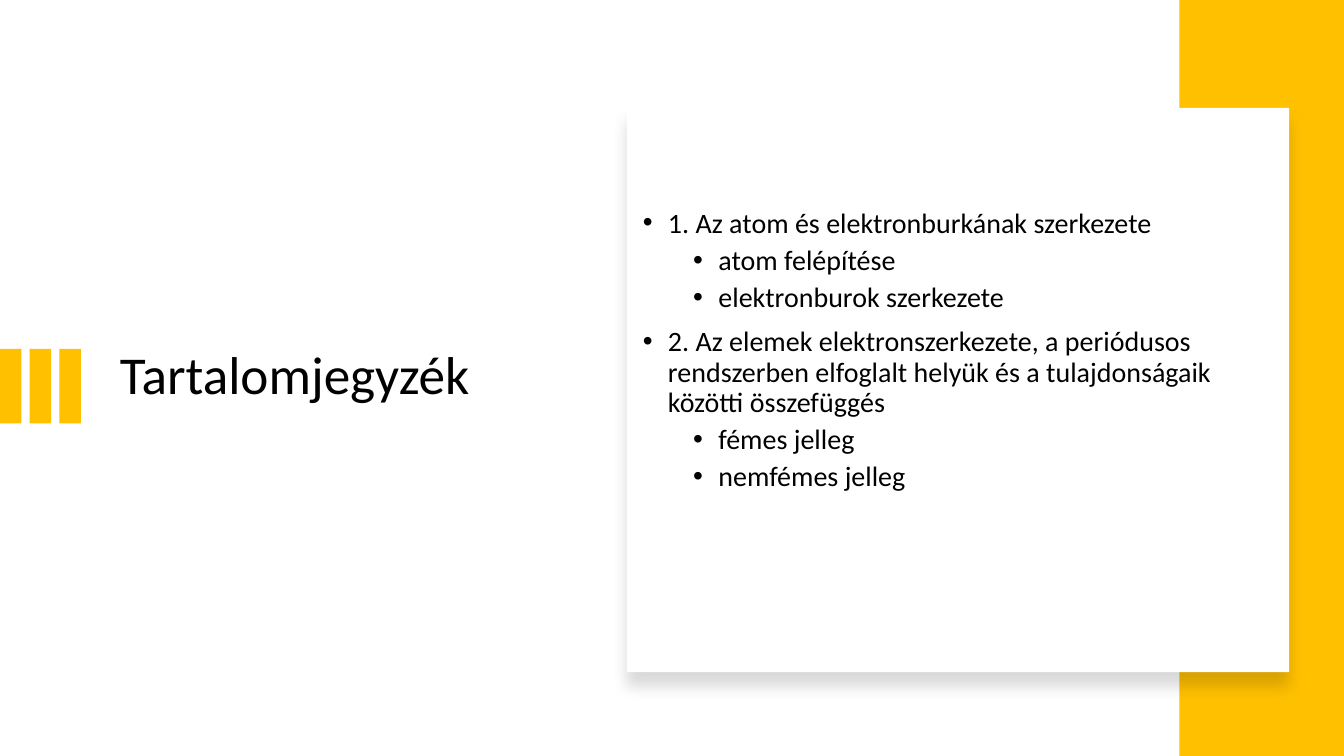
from lxml.etree import SubElement
from pptx import Presentation
from pptx.dml.color import RGBColor
from pptx.enum.shapes import MSO_SHAPE
from pptx.enum.text import MSO_ANCHOR
from pptx.oxml.ns import qn
from pptx.util import Cm, Pt

COLORS = {"accent": "FFC000", "card": "FFFFFF", "text": "000000", "shadow": "000000"}
FONT = "Calibri"
CONTENTS = [
    (0, "1. Az atom és elektronburkának szerkezete"),
    (1, "atom felépítése"),
    (1, "elektronburok szerkezete"),
    (0, "2. Az elemek elektronszerkezete, a periódusos rendszerben elfoglalt "
        "helyük és a tulajdonságaik közötti összefüggés"),
    (1, "fémes jelleg"),
    (1, "nemfémes jelleg"),
]


def add_rectangle(left, top, width, height, color):
    shape = slide.shapes.add_shape(
        MSO_SHAPE.RECTANGLE, Cm(left), Cm(top), Cm(width), Cm(height))
    shape.shadow.inherit = False
    shape.fill.solid()
    shape.fill.fore_color.rgb = RGBColor.from_string(COLORS[color])
    shape.line.fill.background()
    return shape


def format_paragraph(paragraph, size):
    paragraph.line_spacing = 0.9
    for run in paragraph.runs:
        run.font.name = FONT
        run.font.size = Pt(size)
        run.font.color.rgb = RGBColor.from_string(COLORS["text"])


presentation = Presentation()
presentation.slide_width = Cm(33.87)
presentation.slide_height = Cm(19.05)
slide = presentation.slides.add_slide(presentation.slide_layouts[6])

# Title with three bars at the left edge
title = slide.shapes.add_textbox(Cm(2.77), Cm(3.43), Cm(10.82), Cm(12.17))
title.text_frame.word_wrap = True
title.text_frame.vertical_anchor = MSO_ANCHOR.MIDDLE
title.text_frame.text = "Tartalomjegyzék"
format_paragraph(title.text_frame.paragraphs[0], 38)

for bar_index in range(3):
    add_rectangle(bar_index * 0.75, 8.79, 0.54, 1.88, "accent")

# Right band and the card with a soft shadow below it
add_rectangle(29.72, 0, 4.15, 19.05, "accent")
card = add_rectangle(15.8, 2.72, 16.69, 14.22, "card")
effects = card._element.spPr.find(qn("a:effectLst"))
shadow = SubElement(effects, qn("a:outerShdw"), blurRad=str(Pt(11)),
                    dist=str(Pt(10)), dir="5400000", algn="t", rotWithShape="0")
shadow_color = SubElement(shadow, qn("a:srgbClr"), val=COLORS["shadow"])
SubElement(shadow_color, qn("a:alpha"), val="15000")

# Contents list, raised by a deep bottom margin
contents = slide.shapes.add_textbox(Cm(15.95), Cm(3.71), Cm(16.13), Cm(12.34))
text_frame = contents.text_frame
text_frame.word_wrap = True
text_frame.vertical_anchor = MSO_ANCHOR.MIDDLE
text_frame.margin_bottom = Cm(2.2)
text_frame.text = "\n".join(text for level, text in CONTENTS)
for paragraph, (level, text) in zip(text_frame.paragraphs, CONTENTS):
    paragraph.level = level
    paragraph.space_before = Pt(5 if level else 10)
    format_paragraph(paragraph, 20)
    properties = paragraph._p.get_or_add_pPr()
    properties.set("marL", str(Cm(0.635 + 1.27 * level)))
    properties.set("indent", str(-Cm(0.635)))
    SubElement(properties, qn("a:buFont"), typeface="Arial")
    SubElement(properties, qn("a:buChar"), char="•")

presentation.save("out.pptx")
